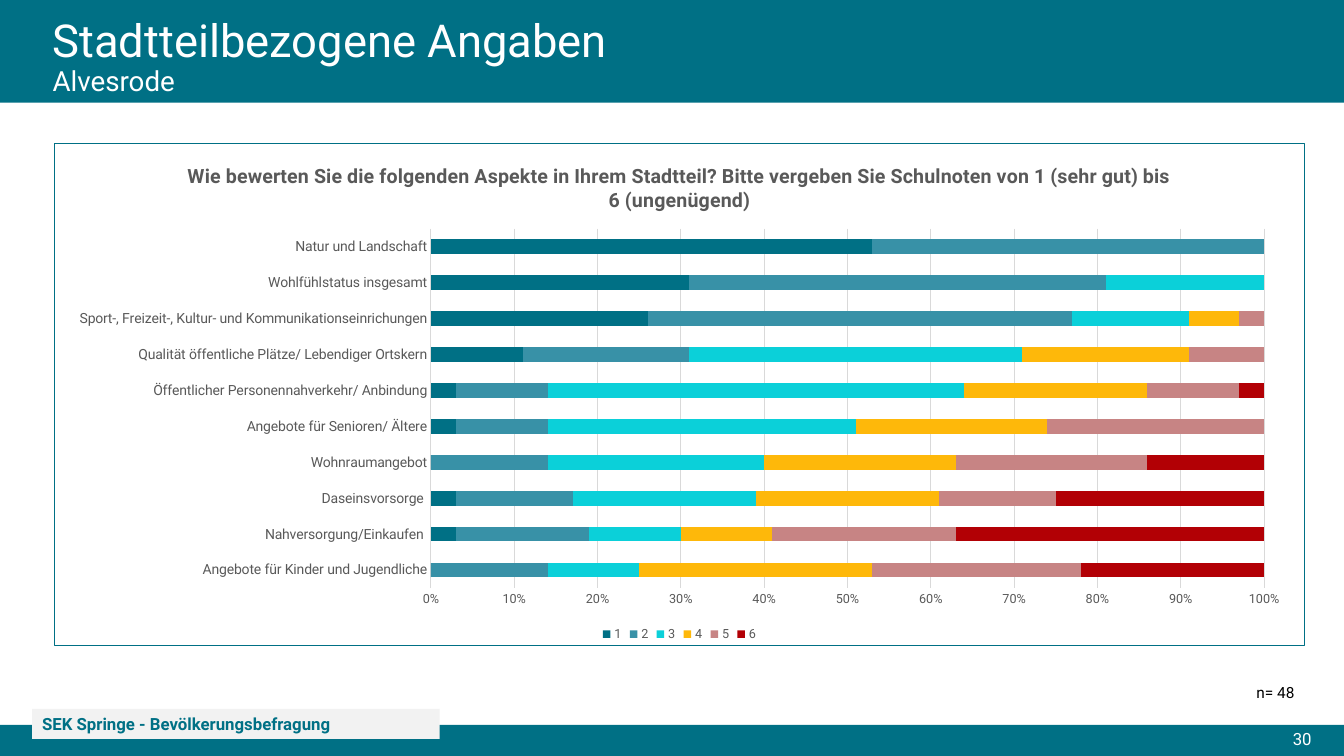
from lxml.etree import fromstring
from pptx import Presentation
from pptx.chart.data import CategoryChartData
from pptx.dml.color import RGBColor
from pptx.enum.chart import XL_CHART_TYPE, XL_LEGEND_POSITION, XL_TICK_MARK
from pptx.enum.shapes import MSO_SHAPE
from pptx.enum.text import MSO_ANCHOR, PP_ALIGN
from pptx.util import Pt

TEAL, WHITE, GRAY, RULE = "007085", "FFFFFF", "595959", "D9D9D9"
PLOT = (0.301, 0.17, 0.667, 0.716)
ASK = ("Wie bewerten Sie die folgenden Aspekte in Ihrem Stadtteil? "
       "Bitte vergeben Sie Schulnoten von 1 (sehr gut) bis 6 (ungenügend)")
TOPICS = [
    "Angebote für Kinder und Jugendliche",
    "Nahversorgung/Einkaufen ",
    "Daseinsvorsorge ",
    "Wohnraumangebot",
    "Angebote für Senioren/ Ältere",
    "Öffentlicher Personennahverkehr/ Anbindung",
    "Qualität öffentliche Plätze/ Lebendiger Ortskern",
    "Sport-, Freizeit-, Kultur- und Kommunikationseinrichungen",
    "Wohlfühlstatus insgesamt",
    "Natur und Landschaft",
]
GRADES = [
    ("1", TEAL, (0, 0.03, 0.03, 0, 0.03, 0.03, 0.11, 0.26, 0.31, 0.53)),
    ("2", "3891A7", (0.14, 0.16, 0.14, 0.14, 0.11, 0.11, 0.2, 0.51, 0.5, 0.47)),
    ("3", "0BD0D9", (0.11, 0.11, 0.22, 0.26, 0.37, 0.5, 0.4, 0.14, 0.19, 0)),
    ("4", "FEB80A", (0.28, 0.11, 0.22, 0.23, 0.23, 0.22, 0.2, 0.06, 0, 0)),
    ("5", "C78484", (0.25, 0.22, 0.14, 0.23, 0.26, 0.11, 0.09, 0.03, 0, 0)),
    ("6", "B20005", (0.22, 0.38, 0.25, 0.14, 0, 0.03, 0, 0, 0, 0)),
]
NS = ('xmlns:c="http://schemas.openxmlformats.org/drawingml/2006/chart" '
      'xmlns:a="http://schemas.openxmlformats.org/drawingml/2006/main"')


def color(code):
    return RGBColor.from_string(code)


class Page:
    face = "Roboto"

    def __init__(self, deck):
        self.slide = deck.slides.add_slide(deck.slide_layouts[5])
        self.shapes = self.slide.shapes

    def style(self, font, size, code, bold=False):
        font.name = self.face
        font.size = Pt(size)
        font.bold = bold
        font.color.rgb = color(code)

    def fit(self, frame, anchor, side=7.2):
        frame.word_wrap = True
        frame.vertical_anchor = anchor
        frame.margin_left = frame.margin_right = Pt(side)
        frame.margin_top = frame.margin_bottom = Pt(3.6)

    def band(self, box, code):
        band = self.shapes.add_shape(MSO_SHAPE.RECTANGLE, *map(Pt, box))
        band.shadow.inherit = False
        band.fill.solid()
        band.fill.fore_color.rgb = color(code)
        band.line.fill.background()
        return band

    def label(self, shape, text, size, code, align=PP_ALIGN.LEFT,
              anchor=MSO_ANCHOR.MIDDLE, bold=False):
        frame = shape.text_frame
        self.fit(frame, anchor)
        frame.text = text
        para = frame.paragraphs[0]
        para.alignment = align
        self.style(para.runs[0].font, size, code, bold)

    def text(self, box, *args, **rest):
        self.label(self.shapes.add_textbox(*map(Pt, box)), *args, **rest)

    def title(self, box, head, sub):
        title = self.shapes.title
        title.left, title.top, title.width, title.height = map(Pt, box)
        frame = title.text_frame
        self.fit(frame, MSO_ANCHOR.MIDDLE)
        frame.text = f"{head}\v{sub}"
        para = frame.paragraphs[0]
        para.alignment = PP_ALIGN.LEFT
        para.line_spacing = 0.9
        for run, size in zip(para.runs, (32.4, 19.8)):
            self.style(run.font, size, WHITE)
        self.shapes.element.append(title.element)

    def axis(self, axis, size):
        axis.major_tick_mark = axis.minor_tick_mark = XL_TICK_MARK.NONE
        self.style(axis.tick_labels.font, size, GRAY)

    def rule(self, line):
        line.color.rgb = color(RULE)
        line.width = Pt(0.75)

    def chart(self, box):
        data = CategoryChartData(number_format="0%")
        data.categories = TOPICS
        for name, _, values in GRADES:
            data.add_series(name, values)
        chart = self.shapes.add_chart(
            XL_CHART_TYPE.BAR_STACKED, *map(Pt, box), data).chart
        self.style(chart.font, 10, "000000")

        chart.has_title = True
        frame = chart.chart_title.text_frame
        frame.text = ASK
        self.style(frame.paragraphs[0].runs[0].font, 14, GRAY, True)
        chart.chart_title.include_in_layout = False

        plot = chart.plots[0]
        plot.gap_width, plot.overlap = 150, 100
        plot.vary_by_categories = False
        for row, (_, code, _) in zip(plot.series, GRADES):
            row.format.fill.solid()
            row.format.fill.fore_color.rgb = color(code)

        self.axis(chart.category_axis, 10)
        self.rule(chart.category_axis.format.line)
        scale = chart.value_axis
        self.axis(scale, 9)
        scale.minimum_scale, scale.maximum_scale = 0, 1
        scale.major_unit = 0.1
        scale.tick_labels.number_format = "0%"
        scale.tick_labels.number_format_is_linked = False
        scale.format.line.fill.background()
        self.rule(scale.major_gridlines.format.line)

        chart.has_legend = True
        chart.legend.position = XL_LEGEND_POSITION.BOTTOM
        chart.legend.include_in_layout = False
        self.style(chart.legend.font, 9, GRAY)
        self.frame(chart)

    def frame(self, chart):
        root = chart.element
        root.chart.addnext(fromstring(
            f'<c:spPr {NS}><a:solidFill><a:srgbClr val="{WHITE}"/></a:solidFill>'
            f'<a:ln w="9525"><a:solidFill><a:srgbClr val="{TEAL}"/>'
            '</a:solidFill></a:ln></c:spPr>'))
        area = root.chart.plotArea
        for old in area.findall("{*}layout"):
            area.remove(old)
        spots = "".join(f'<c:{key} val="{num}"/>' for key, num in zip("xywh", PLOT))
        area.insert(0, fromstring(
            f'<c:layout {NS}><c:manualLayout><c:layoutTarget val="inner"/>'
            '<c:xMode val="edge"/><c:yMode val="edge"/>'
            f'{spots}</c:manualLayout></c:layout>'))


def main():
    deck = Presentation()
    deck.slide_width, deck.slide_height = Pt(960), Pt(540)
    page = Page(deck)
    page.band((0, 0, 960, 73.3), TEAL)
    page.band((0, 517.8, 960, 22.2), TEAL)
    page.text((628, 517, 316, 21.6), "30", 12, WHITE, PP_ALIGN.RIGHT)
    page.label(page.band((23, 506.3, 291, 21.6), "F2F2F2"),
               "SEK Springe - Bevölkerungsbefragung", 12, TEAL, bold=True)
    page.title((30.3, 15, 828, 52.6), "Stadtteilbezogene Angaben", "Alvesrode")
    page.text((887.8, 484.6, 43.9, 20.6), "n= 48", 11, "000000",
              PP_ALIGN.RIGHT, MSO_ANCHOR.TOP)
    page.chart((38.9, 102, 893, 359.5))
    deck.save("out.pptx")


if __name__ == "__main__":
    main()
